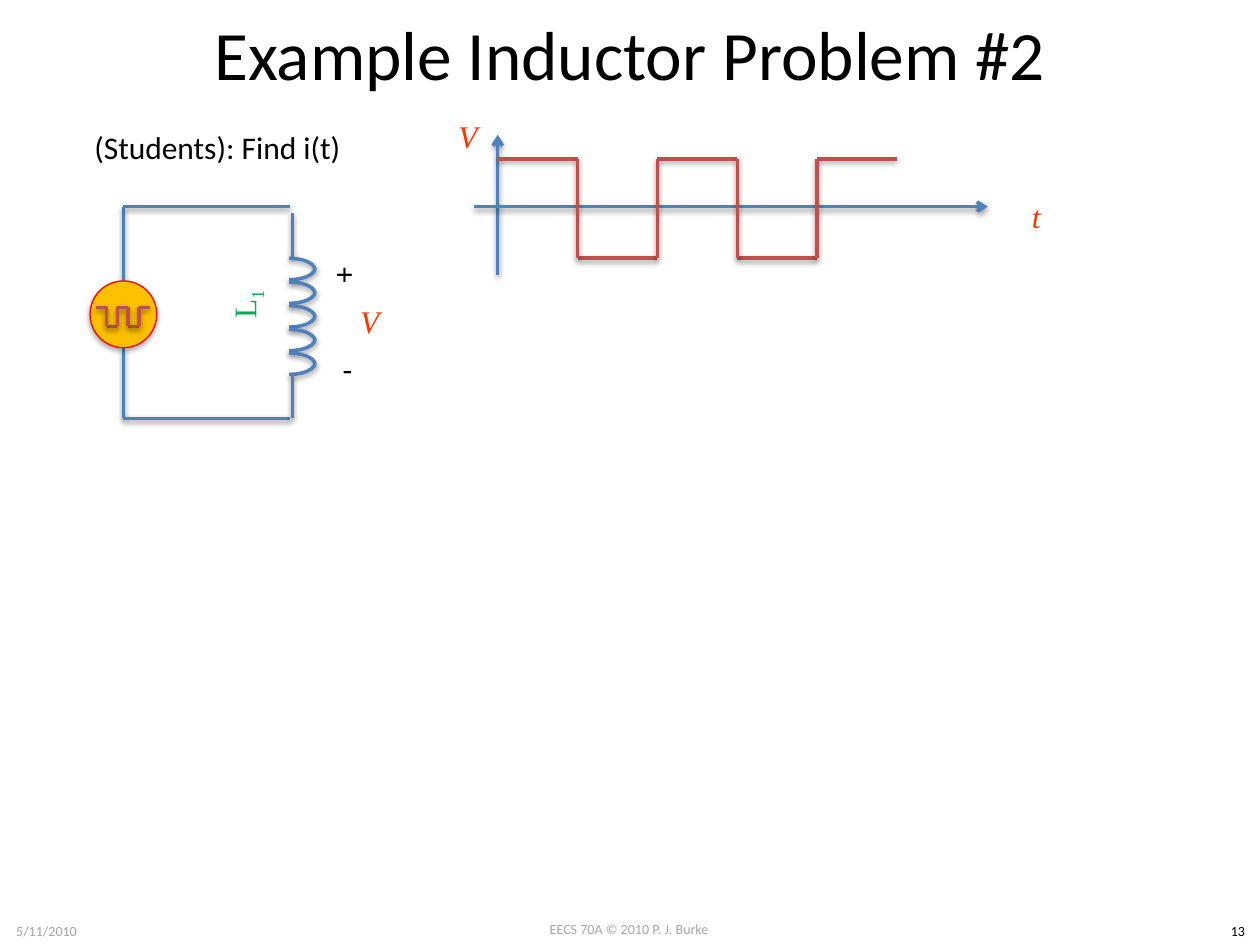
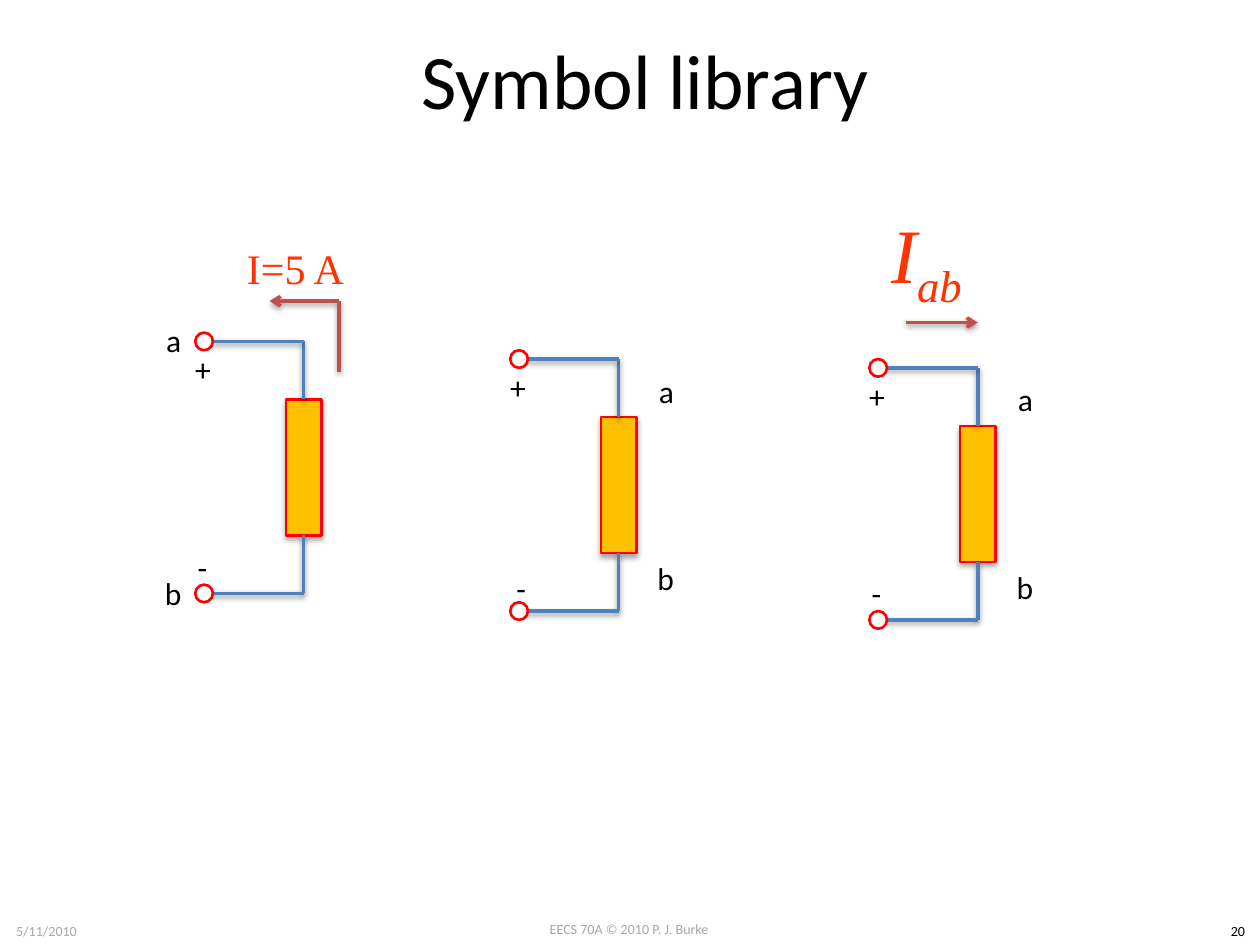
import dataclasses

import lxml.etree
import pptx
import pptx.dml.color
import pptx.enum.shapes
import pptx.enum.text
import pptx.oxml.ns
import pptx.util

SHAPE = pptx.enum.shapes.MSO_SHAPE
ALIGN = pptx.enum.text.PP_ALIGN
ANCHOR = pptx.enum.text.MSO_ANCHOR
FIT = pptx.enum.text.MSO_AUTO_SIZE
COLUMNS, ROWS = 100, 75  # slide grid; each cell is a tenth of an inch


@dataclasses.dataclass(frozen=True)
class Theme:
    sans: str = "Calibri"
    serif: str = "Times New Roman"
    ink: str = "000000"
    muted: str = "A6A6A6"
    wire: str = "4F81BD"
    signal: str = "C0504D"
    quantity: str = "FF3300"
    inductor: str = "00B050"
    body: str = "FFC000"
    outline: str = "FF0000"
    footer_size: float = 8
    label_size: float = 18
    current_size: float = 24
    title_size: float = 44
    small_title_size: float = 39.6
    wire_width: float = 2


THEME = Theme()


def cells(count):
    return pptx.util.Inches(count / 10)


def rgb(value):
    return pptx.dml.color.RGBColor.from_string(value)


def qualified(tag):
    return pptx.oxml.ns.qn(tag)


def cast_shadow(item, opacity, distance):
    """Soft shadow straight below; call after fill and line are set."""
    effects = lxml.etree.SubElement(item.element.spPr, qualified("a:effectLst"))
    shadow = lxml.etree.SubElement(
        effects, qualified("a:outerShdw"), blurRad="40000",
        dist=str(pptx.util.Pt(distance)), dir="5400000", rotWithShape="0")
    tint = lxml.etree.SubElement(shadow, qualified("a:srgbClr"), val=THEME.ink)
    lxml.etree.SubElement(tint, qualified("a:alpha"), val=str(opacity * 1000))


def add_run(paragraph, text, size, color, font=THEME.sans, italic=False, subscript=False):
    run = paragraph.add_run()
    run.text = text
    run.font.name, run.font.size = font, pptx.util.Pt(size)
    run.font.color.rgb = rgb(color)
    run.font.italic = italic
    if subscript:
        run.font._element.set("baseline", "-25000")


@dataclasses.dataclass
class Region:
    """A box on a slide; everything drawn in it is measured from its corner."""
    slide: object
    left: float
    top: float
    width: float
    height: float

    def at(self, x, y):
        return cells(self.left + x), cells(self.top + y)

    def inner(self, x, y, width, height):
        return Region(self.slide, self.left + x, self.top + y, width, height)

    def text_box(self, x, y, width, height, wrap):
        box = self.slide.shapes.add_textbox(*self.at(x, y), cells(width), cells(height))
        box.text_frame.word_wrap = wrap
        return box

    def label(self, text, x, y, width=3.3, height=4):
        """Plain sans label that grows with its text."""
        box = self.text_box(x, y, width, height, False)
        box.text_frame.auto_size = FIT.SHAPE_TO_FIT_TEXT
        add_run(box.text_frame.paragraphs[0], text, THEME.label_size, THEME.ink)
        return box

    def symbol(self, text, x, y, width=7.7, height=6.1, subscript="",
               size=THEME.label_size, color=THEME.quantity, italic=True):
        """Centred serif quantity with an optional subscript."""
        box = self.text_box(x, y, width, height, True)
        box.text_frame.vertical_anchor = ANCHOR.MIDDLE
        paragraph = box.text_frame.paragraphs[0]
        paragraph.alignment = ALIGN.CENTER
        add_run(paragraph, text, size, color, THEME.serif, italic)
        if subscript:
            add_run(paragraph, subscript, size, color, THEME.serif, italic, True)
        return box

    def line(self, start, end, color=THEME.wire, arrow=False, start_on=None, end_on=None):
        """Straight line; start_on and end_on are (shape, side) joints."""
        wire = self.slide.shapes.add_connector(
            pptx.enum.shapes.MSO_CONNECTOR.STRAIGHT, *self.at(*start), *self.at(*end))
        if start_on:
            wire.begin_connect(*start_on)
        if end_on:
            wire.end_connect(*end_on)
        wire.line.color.rgb = rgb(color)
        wire.line.width = pptx.util.Pt(THEME.wire_width)
        if arrow:
            lxml.etree.SubElement(wire.line._get_or_add_ln(), qualified("a:tailEnd"), type="arrow")
        cast_shadow(wire, 38, 1.6)

    def shape(self, preset, x, y, width, height, fill=None, outline=THEME.outline,
              weight=1.5, shadow=None):
        part = self.slide.shapes.add_shape(
            preset, *self.at(x, y), cells(width), cells(height))
        if fill:
            part.fill.solid()
            part.fill.fore_color.rgb = rgb(fill)
        else:
            part.fill.background()
        part.line.color.rgb = rgb(outline)
        part.line.width = pptx.util.Pt(weight)
        if shadow:
            cast_shadow(part, *shadow)
        else:
            part.shadow.inherit = False
        return part


# Shared slide frame: title and footer line
def titled_slide(deck, title, number, left, height, size):
    slide = deck.slides.add_slide(deck.slide_layouts[5])
    heading = slide.shapes.title
    heading.left, heading.top = cells(left), cells(0)
    heading.width, heading.height = cells(0.9 * COLUMNS), cells(height)
    heading.text_frame.auto_size = FIT.NONE
    heading.text_frame.vertical_anchor = ANCHOR.MIDDLE
    paragraph = heading.text_frame.paragraphs[0]
    paragraph.alignment = ALIGN.CENTER
    add_run(paragraph, title, size, THEME.ink)

    page = Region(slide, 0, 0, COLUMNS, ROWS)
    footers = (("EECS 70A © 2010 P. J. Burke", 38.3, 72.6, 23.3, THEME.muted),
               ("5/11/2010", 0, 72.7, 7.4, THEME.muted),
               (number, 96.5, 72.7, 3.5, THEME.ink))
    for text, x, y, width, color in footers:
        footer = page.text_box(x, y, width, 2.4, True)
        footer.text_frame.auto_size = FIT.SHAPE_TO_FIT_TEXT
        paragraph = footer.text_frame.paragraphs[0]
        paragraph.alignment = ALIGN.CENTER
        add_run(paragraph, text, THEME.footer_size, color)
    return page


# Square wave: five half periods, starting high, filling its region
def square_wave(region, halves=5):
    step = region.width / halves
    for half in range(halves):
        level = region.height * (half % 2)
        x = half * step
        region.line((x, level), (x + step, level), THEME.signal)
        if half:
            region.line((x, 0), (x, region.height), THEME.signal)


# Voltage against time
def voltage_plot(region):
    axis_x, axis_y = 1.9, 5.7
    region.line((axis_x, region.height), (axis_x, 0), arrow=True)
    region.line((0, axis_y), (region.width, axis_y), arrow=True)
    region.symbol("V", -4.3, -3)
    region.symbol("t", region.width, 3.4)
    square_wave(region.inner(axis_x, 1.9, 31.7, 7.9))


# Inductor: two leads and a stack of turns
def coil(region, turns=5, pitch=1.88, lead=3.5):
    region.line((0, lead), (0, 0))
    for turn in range(turns):
        y = lead + turn * pitch
        for flipped in (False, True):
            arc = region.shape(SHAPE.ARC, -2.3, y if flipped else y + 0.1, 4.1, 1.8,
                               outline=THEME.wire, weight=THEME.wire_width, shadow=(38, 1.6))
            if flipped:
                arc.element.spPr.find(qualified("a:xfrm")).set("flipV", "1")
    region.line((0, region.height), (0, region.height - lead))


# Loop of square-wave source and inductor
def inductor_circuit(region):
    source_top, source_size = 5.9, 5.3
    wire_end = region.width - 0.2
    region.line((0, source_top), (0, 0))
    region.line((0, source_top + source_size), (0, region.height))
    for y in (0, region.height):
        region.line((0, y), (wire_end, y))
    region.shape(SHAPE.OVAL, -source_size / 2, source_top, source_size, source_size,
                 THEME.body, weight=0.75, shadow=(35, 1.8))
    square_wave(region.inner(-2.2, 8, 4.3, 1.5))
    coil(region.inner(region.width, 0.5, 2, region.height - 0.5))
    region.label("+", 16.1, 3.5).rotation = 90
    region.label("-", 16.4, 10.9, 2.8)
    region.symbol("V", 15.7, 6)
    inductance = region.symbol("L", 3.8, 4.1, 11.9, 7.3, "1",
                               color=THEME.inductor, italic=False)
    inductance.rotation = 270


# Two-terminal element; the region runs from terminal to terminal
def two_terminal(region, a_at, b_at, minus_at):
    terminal, body_width, body_height = 1.4, 2.8, 10.8
    wire_x = region.width
    wire_top, wire_bottom = terminal / 2, region.height - terminal / 2
    body_top = (region.height - body_height) / 2
    region.label("a", *a_at, 3.2)
    region.label("b", *b_at, 3.4)
    body = region.shape(SHAPE.RECTANGLE, wire_x - body_width / 2, body_top,
                        body_width, body_height, THEME.body, shadow=(35, 1.8))
    region.line((wire_x, wire_bottom), (wire_x, body_top + body_height), end_on=(body, 2))
    region.line((wire_x, body_top), (wire_x, wire_top), start_on=(body, 0))
    for y in (wire_top, wire_bottom):
        region.line((terminal - 0.1, y), (wire_x, y))
        region.shape(SHAPE.OVAL, 0, y - terminal / 2, terminal, terminal)
    region.label("+", -1, 0.9)
    region.label("-", *minus_at, 2.8)


# Slide: inductor problem
def inductor_problem(deck):
    page = titled_slide(deck, "Example Inductor Problem #2", "13", 5, 8.3,
                        THEME.small_title_size)
    page.label("(Students): Find i(t)", 6.5, 9.7, 22.5)
    inductor_circuit(page.inner(9.8, 16.4, 13.4, 16.8))
    voltage_plot(page.inner(37.6, 10.7, 40.8, 11.1))


# Slide: symbol library
def symbol_library(deck):
    page = titled_slide(deck, "Symbol library", "20", 6.2, 12.5, THEME.title_size)
    width, height = 8.6, 21.4
    bent, plain, straight = (page.inner(x, y, width, height)
                             for x, y in ((15.5, 26.4), (40.5, 27.8), (69, 28.5)))
    right_side = (10.8, 1.2), (10.7, 16.1)
    two_terminal(plain, *right_side, (-0.5, 16.9))
    two_terminal(straight, *right_side, (-0.8, 16.6))
    two_terminal(bent, (-3.3, -1.4), (-3.4, 18.7), (-0.8, 16.6))

    # Current arrows
    straight.line((2.9, -2.9), (width, -2.9), THEME.signal, arrow=True)
    straight.symbol("I", -1.7, -13, 12.5, 10.1, "ab", THEME.title_size)
    corner = (11.4, -2.5)
    bent.line(corner, (5.9, -2.5), THEME.signal, arrow=True)
    bent.line((11.4, 3.1), corner, THEME.signal)
    bent.symbol("I=5 A", 2, -8.8, 11.9, 7.3, size=THEME.current_size, italic=False)


def main():
    deck = pptx.Presentation()
    deck.slide_width, deck.slide_height = cells(COLUMNS), cells(ROWS)
    inductor_problem(deck)
    symbol_library(deck)
    deck.save("out.pptx")


if __name__ == "__main__":
    main()
